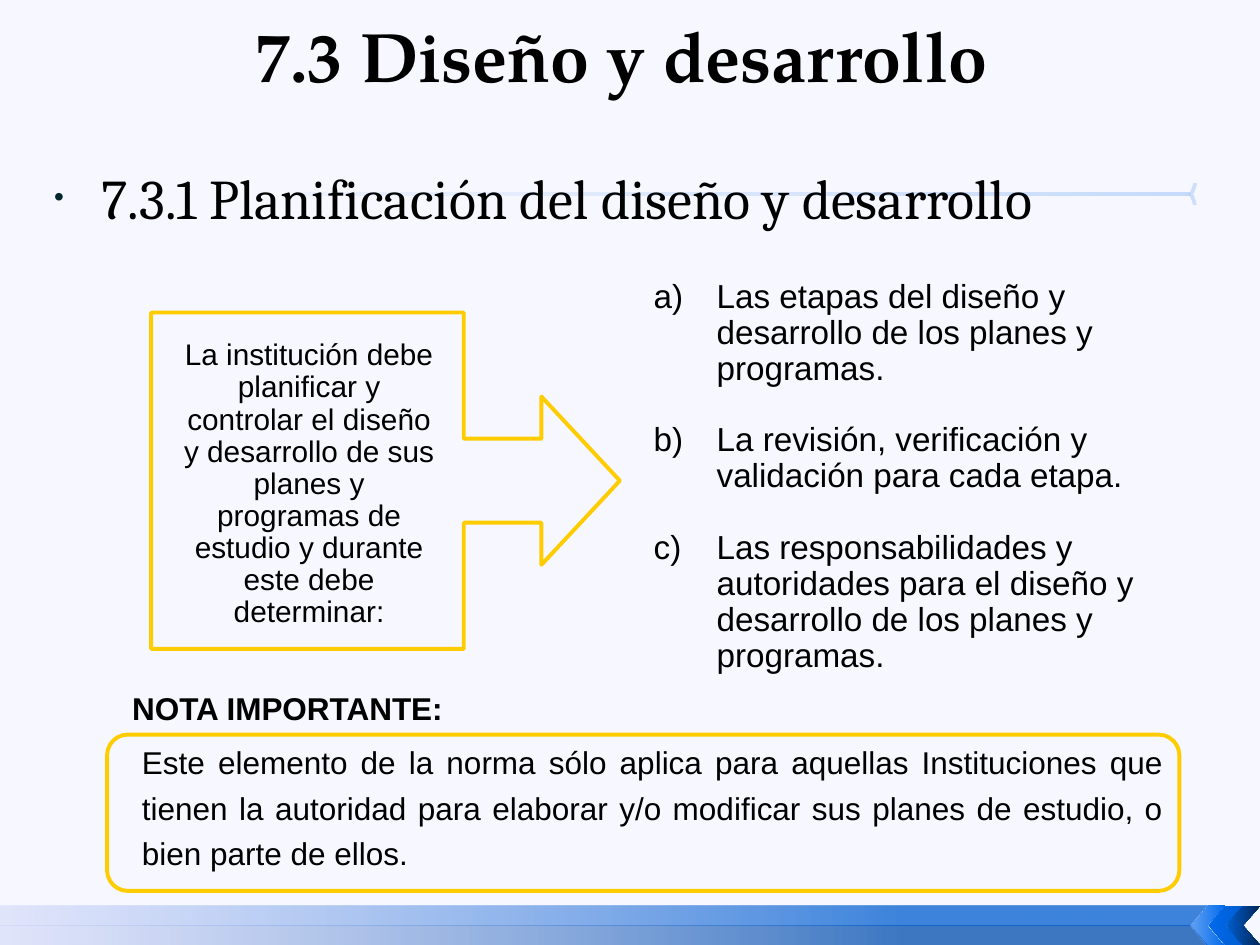
from dataclasses import dataclass

from lxml.etree import SubElement
from pptx import Presentation
from pptx.dml.color import RGBColor
from pptx.enum.shapes import MSO_SHAPE
from pptx.enum.text import MSO_ANCHOR, MSO_AUTO_SIZE, PP_ALIGN
from pptx.oxml.ns import qn
from pptx.util import Pt


@dataclass(frozen=True)
class Theme:
    background: str = "F7F7FF"
    ink: str = "000000"
    accent: str = "FFCC00"
    bullet: str = "00272B"
    pale: str = "CCD4F8"
    bright: str = "006AED"
    medium: str = "005ED1"
    deep: str = "004EAF"
    navy: str = "002757"
    title_font: str = "TeX Gyre Pagella"
    heading_font: str = "Cambria"
    text_font: str = "Arial"
    title_size: float = 40
    heading_size: float = 32
    list_size: float = 19
    note_size: float = 18
    callout_size: float = 17
    outline: float = 2.25


class SlideBuilder:
    """Draws styled elements on the current slide, with lengths in points."""

    def __init__(self, page, theme):
        self.page = page
        self.theme = theme
        page.background.fill.solid()
        page.background.fill.fore_color.rgb = RGBColor.from_string(theme.background)

    def gradient(self, shape, *stops):
        shape.shadow.inherit = False
        shape.line.fill.background()
        shape.fill.gradient()
        shape.fill.gradient_angle = 180
        for stop, (position, color, _) in zip(shape.fill.gradient_stops, stops):
            stop.position = position
            stop.color.rgb = RGBColor.from_string(color)
        colors = list(shape._element.spPr.iter(qn("a:srgbClr")))
        for color, (_, _, opacity) in zip(colors, stops):
            SubElement(color, qn("a:alpha"), val=str(opacity * 1000))

    def shape(self, kind, left, top, width, height, adjustments=()):
        shape = self.page.shapes.add_shape(
            kind, Pt(left), Pt(top), Pt(width), Pt(height))
        shape.shadow.inherit = False
        for index, value in enumerate(adjustments):
            shape.adjustments[index] = value
        return shape

    def chevron(self, left, top, width, height, *stops):
        shape = self.shape(MSO_SHAPE.CHEVRON, left, top, width, height, [0.5])
        shape._element.spPr.find(qn("a:xfrm")).set("flipH", "1")
        self.gradient(shape, *stops)

    def stripe(self, outer, inner, color):
        builder = self.page.shapes.build_freeform(Pt(689.8), Pt(outer))
        corners = [(0, outer), (0, inner), (679.7, inner)]
        builder.add_line_segments([(Pt(x), Pt(y)) for x, y in corners])
        self.gradient(builder.convert_to_shape(),
                      (0.25, color, 75), (1, self.theme.pale, 50))

    def outline(self, kind, left, top, width, height, adjustments):
        shape = self.shape(kind, left, top, width, height, adjustments)
        shape.fill.background()
        shape.line.color.rgb = RGBColor.from_string(self.theme.accent)
        shape.line.width = Pt(self.theme.outline)

    def style(self, para, font, size, bold=False):
        for span in para.runs:
            span.font.name = font
            span.font.size = Pt(size)
            span.font.bold = bold
            span.font.color.rgb = RGBColor.from_string(self.theme.ink)

    def title(self, text, left, top, width, height):
        box = self.page.shapes.title
        box.left, box.top, box.width, box.height = map(Pt, (left, top, width, height))
        box.text_frame.text = text
        box.text_frame.vertical_anchor = MSO_ANCHOR.MIDDLE
        para = box.text_frame.paragraphs[0]
        para.alignment = PP_ALIGN.CENTER
        self.style(para, self.theme.title_font, self.theme.title_size, True)

    def text(self, lines, left, top, width, height, size, font=None, bold=False,
             align=PP_ALIGN.LEFT, spacing=None, gap=0, indent=0, hanging=0):
        box = self.page.shapes.add_textbox(Pt(left), Pt(top), Pt(width), Pt(height))
        frame = box.text_frame
        frame.word_wrap = True
        frame.auto_size = MSO_AUTO_SIZE.SHAPE_TO_FIT_TEXT
        frame.text = "\n".join(lines)
        for index, para in enumerate(frame.paragraphs):
            para.alignment = align
            if spacing:
                para.line_spacing = spacing
            if index:
                para.space_before = Pt(gap)
            properties = para._p.get_or_add_pPr()
            properties.set("marL", str(Pt(indent)))
            properties.set("indent", str(-Pt(hanging)))
            self.style(para, font or self.theme.text_font, size, bold)
        return [para._p.pPr for para in frame.paragraphs]

    def bullets(self, *args, **options):
        for properties in self.text(*args, **options):
            color = SubElement(properties, qn("a:buClr"))
            SubElement(color, qn("a:srgbClr"), val=self.theme.bullet)
            SubElement(properties, qn("a:buSzPct"), val="50000")
            SubElement(properties, qn("a:buFont"), typeface=self.theme.text_font)
            SubElement(properties, qn("a:buChar"), char="•")

    def letters(self, *args, **options):
        for properties in self.text(*args, **options):
            SubElement(properties, qn("a:buFont"), typeface=self.theme.text_font)
            SubElement(properties, qn("a:buAutoNum"), type="alphaLcParenR")

    def decoration(self):
        theme = self.theme
        self.stripe(540, 528.8, theme.deep)
        self.stripe(517.7, 528.8, theme.medium)
        shades = [(theme.bright, 60), (theme.bright, 100),
                  (theme.medium, 100), (theme.navy, 100)]
        for index, (start, end) in enumerate(zip(shades, shades[1:])):
            self.chevron(680.4 + 10.1 * index, 517.7, 19.4, 22.3,
                         (0, *start), (1, theme.bright if index == 0 else end[0], 100))
        self.chevron(679.7, 105.1, 4.3, 11.5,
                     (0, theme.bright, 20), (1, theme.bright, 15))
        rule = self.shape(MSO_SHAPE.RECTANGLE, 173.5, 110.2, 506.2, 1.4)
        self.gradient(rule, (0, theme.bright, 20), (1, theme.bright, 4))


def main():
    deck = Presentation()
    deck.slide_width, deck.slide_height = Pt(720), Pt(540)
    theme = Theme()
    slide = SlideBuilder(deck.slides.add_slide(deck.slide_layouts[5]), theme)
    slide.decoration()
    slide.title("7.3 Diseño y desarrollo", 31, -2.2, 648, 67)
    slide.bullets(["7.3.1 Planificación del diseño y desarrollo"],
                  23.8, 90, 670.3, 46, theme.heading_size,
                  font=theme.heading_font, indent=27, hanging=27)
    slide.outline(MSO_SHAPE.RIGHT_ARROW_CALLOUT, 86.4, 178.6, 267.8, 192.2,
                  [0.25, 0.25, 0.233, 0.667])
    slide.text(["La institución debe planificar y controlar el diseño y desarrollo "
                "de sus planes y programas de estudio y durante este debe determinar:"],
               95, 190.8, 163.4, 172.8, theme.callout_size,
               align=PP_ALIGN.CENTER, spacing=0.9)
    slide.letters(["Las etapas del diseño y desarrollo de los planes y programas.",
                   "La revisión, verificación y validación para cada etapa.",
                   "Las responsabilidades y autoridades para el diseño y desarrollo "
                   "de los planes y programas."],
                  366.5, 156.2, 328.3, 232.6, theme.list_size,
                  spacing=0.9, gap=20.5, indent=36, hanging=36)
    slide.outline(MSO_SHAPE.ROUNDED_RECTANGLE, 61.2, 419.8, 612.7, 89.3, [0.132])
    slide.text(["Este elemento de la norma sólo aplica para aquellas Instituciones que "
                "tienen la autoridad para elaborar y/o modificar sus planes de estudio, "
                "o bien parte de ellos."],
               59, 416.9, 612.7, 85, theme.note_size,
               align=PP_ALIGN.JUSTIFY, spacing=1.2, indent=15)
    slide.text(["NOTA IMPORTANTE:"], 68.4, 390.2, 566, 28.8, theme.note_size,
               bold=True, align=PP_ALIGN.JUSTIFY)
    deck.save("out.pptx")


if __name__ == "__main__":
    main()
